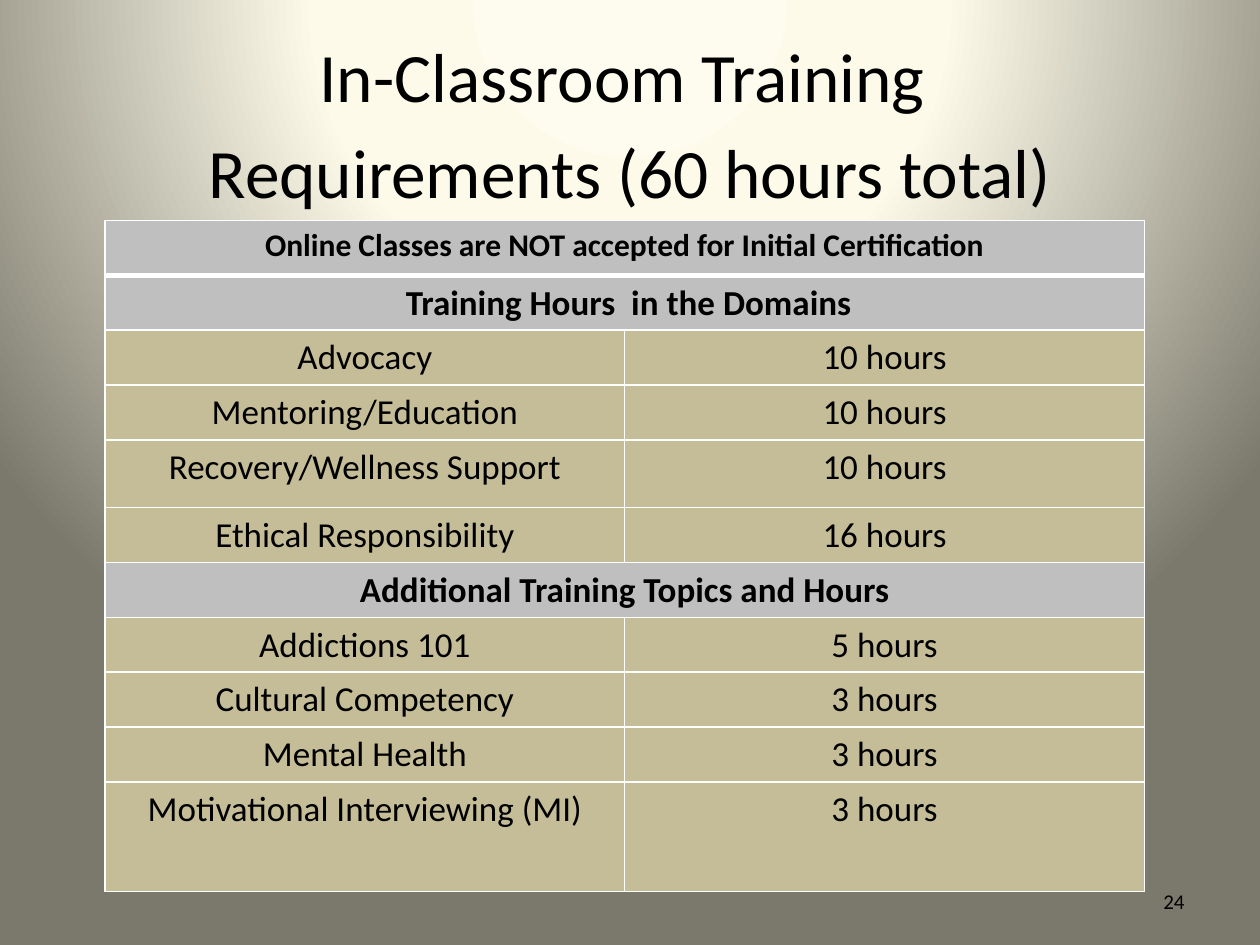
"""Build the in-classroom training requirements slide."""
from dataclasses import dataclass

from lxml.etree import SubElement
from pptx import Presentation
from pptx.dml.color import RGBColor
from pptx.enum.text import MSO_ANCHOR as Anchor, PP_ALIGN as Align
from pptx.oxml import parse_xml
from pptx.oxml.ns import nsdecls, qn
from pptx.util import Emu, Inches, Pt


@dataclass(frozen=True)
class Theme:
    font: str = "Calibri"
    text: str = "000000"
    band: str = "BFBFBF"
    body: str = "C4BD97"
    border: str = "FFFFFF"
    backdrop: tuple = ((0, "FEFCEE"), (40, "FDFAEA"), (100, "7B796B"))
    title_size: float = 39.6
    table_size: float = 20
    notice_size: float = 18
    number_size: float = 12
    spacing: float = 1.15
    thin: float = 1
    thick: float = 3


class SlideBuilder:
    def __init__(self, presentation, theme):
        self.theme = theme
        self.width, self.height = presentation.slide_width, presentation.slide_height
        self.slide = presentation.slides.add_slide(presentation.slide_layouts[6])

    def box(self, left, top, width, height):
        return (Emu(round(left * self.width)), Emu(round(top * self.height)),
                Emu(round(width * self.width)), Emu(round(height * self.height)))

    def background(self):
        self.slide.background.fill.solid()
        solid = self.slide.element.find(".//" + qn("p:bgPr") + "/" + qn("a:solidFill"))
        stops = "".join(f'<a:gs pos="{share * 1000}"><a:srgbClr val="{color}"/></a:gs>'
                        for share, color in self.theme.backdrop)
        gradient = parse_xml(
            f'<a:gradFill rotWithShape="1" {nsdecls("a")}><a:gsLst>{stops}</a:gsLst>'
            '<a:path path="circle"><a:fillToRect l="50000" t="-80000" r="50000" b="180000"/>'
            '</a:path></a:gradFill>')
        solid.getparent().replace(solid, gradient)

    def fill_text(self, text_frame, text, size, align=Align.CENTER, spacing=None, bold=False):
        text_frame.text = text
        text_frame.word_wrap = True
        for paragraph in text_frame.paragraphs:
            paragraph.alignment = align
            paragraph.line_spacing = spacing
            for run in paragraph.runs:
                run.font.name, run.font.size, run.font.bold = self.theme.font, Pt(size), bold
                run.font.color.rgb = RGBColor.from_string(self.theme.text)

    def text(self, box, text, size, **options):
        text_frame = self.slide.shapes.add_textbox(*self.box(*box)).text_frame
        self.fill_text(text_frame, text, size, **options)
        text_frame.vertical_anchor = Anchor.MIDDLE

    def borders(self, cell, **widths):
        properties = cell._tc.get_or_add_tcPr()
        for side in "LRTB":
            width = Pt(widths.get(side, self.theme.thin))
            line = SubElement(properties, qn(f"a:ln{side}"), w=str(width))
            fill = SubElement(line, qn("a:solidFill"))
            SubElement(fill, qn("a:srgbClr"), val=self.theme.border)

    def table(self, box, rows, row_shares):
        theme = self.theme
        left, top, width, height = self.box(*box)
        table = self.slide.shapes.add_table(len(rows), 2, left, top, width, height).table
        for index, (texts, share) in enumerate(zip(rows, row_shares)):
            table.rows[index].height = Emu(round(height * share / sum(row_shares)))
            is_band = len(texts) == 1
            size = theme.table_size if index else theme.notice_size
            heavy = {0: {"B": theme.thick}, 1: {"T": theme.thick}}.get(index, {})
            for cell in table.rows[index].cells:
                self.borders(cell, **heavy)
                cell.fill.solid()
                cell.fill.fore_color.rgb = RGBColor.from_string(theme.band if is_band else theme.body)
                cell.margin_left = cell.margin_right = Inches(0.06)
                cell.margin_top = cell.margin_bottom = 0
            if is_band:
                table.cell(index, 0).merge(table.cell(index, 1))
            for column, text in enumerate(texts):
                self.fill_text(table.cell(index, column).text_frame, text, size,
                               spacing=theme.spacing, bold=is_band)


def main():
    rows = [
        ("Online Classes are NOT accepted for Initial Certification",),
        (" Training Hours  in the Domains",),
        ("Advocacy", "10 hours"),
        ("Mentoring/Education", "10 hours"),
        ("Recovery/Wellness Support", "10 hours"),
        ("Ethical Responsibility", "16 hours"),
        ("Additional Training Topics and Hours",),
        ("Addictions 101", "5 hours"),
        ("Cultural Competency", "3 hours"),
        ("Mental Health", "3 hours"),
        ("Motivational Interviewing (MI)", "3 hours"),
    ]
    row_shares = [1] * 4 + [1.24] + [1] * 5 + [2]
    theme = Theme()
    presentation = Presentation()
    presentation.slide_width, presentation.slide_height = Inches(10), Inches(7.5)
    builder = SlideBuilder(presentation, theme)
    builder.background()
    builder.text((0.05, 0.04, 0.9, 1 / 6), "In-Classroom Training \vRequirements (60 hours total)",
                 theme.title_size, spacing=theme.spacing)
    builder.table((1 / 12, 7 / 30, 0.825, 0.71), rows, row_shares)
    builder.text((0.717, 0.927, 0.233, 0.053), "24", theme.number_size, align=Align.RIGHT)
    presentation.save("out.pptx")


if __name__ == "__main__":
    main()
